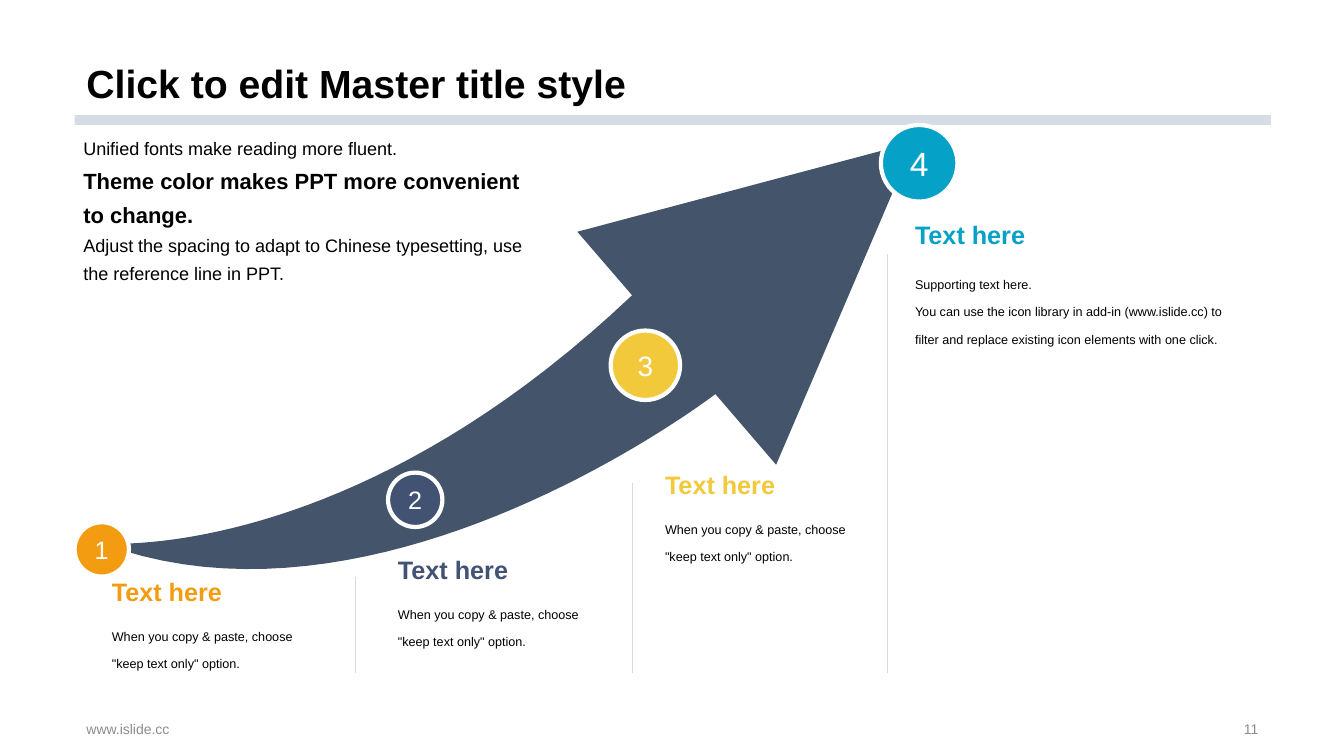
from pptx import Presentation
from pptx.dml.color import RGBColor
from pptx.enum.shapes import MSO_CONNECTOR, MSO_SHAPE
from pptx.enum.text import MSO_ANCHOR, PP_ALIGN
from pptx.oxml.ns import qn
from pptx.util import Cm, Pt
from lxml.etree import SubElement

BLACK, WHITE, GREY = "000000", "FFFFFF", "8C8C8C"
BAR, ARROW, DIVIDER = "D6DCE5", "44546A", "D9D9D9"
DIVIDER_BOTTOM = 16.97
HEADING_HEIGHT = 1.14
SHORT_BODY = ['When you copy & paste, choose "keep text only" option.']
LONG_BODY = [
    "Supporting text here.",
    "You can use the icon library in add-in (www.islide.cc) to filter "
    "and replace existing icon elements with one click.",
]

# number, color, circle (left, top, size), number size,
# text (left, top, width, body height), heading anchor, body
STEPS = [
    ("1", "F39C12", (1.88, 13.16, 1.37), 18, (2.57, 14.27, 5.87, 1.55),
     MSO_ANCHOR.BOTTOM, SHORT_BODY),
    ("2", "425272", (9.78, 11.91, 1.37), 18, (9.78, 13.72, 5.87, 1.55),
     MSO_ANCHOR.BOTTOM, SHORT_BODY),
    ("3", "F3C93C", (15.39, 8.33, 1.75), 20, (16.51, 11.58, 5.87, 1.55),
     MSO_ANCHOR.BOTTOM, SHORT_BODY),
    ("4", "06A1C6", (22.2, 3.15, 1.93), 24, (22.81, 5.41, 8.53, 2.51),
     MSO_ANCHOR.TOP, LONG_BODY),
]
DIVIDERS = [(8.94, 14.53), (15.93, 12.17), (22.35, 6.4)]


def color(hex_string):
    return RGBColor.from_string(hex_string)


def curve(start, control1, control2, end, steps=40):
    """Points along a cubic Bezier curve, without its start."""
    points = []
    for step in range(1, steps + 1):
        t = step / steps
        weights = ((1 - t) ** 3, 3 * t * (1 - t) ** 2, 3 * t * t * (1 - t), t ** 3)
        corners = (start, control1, control2, end)
        points.append(tuple(sum(w * corner[axis] for w, corner in zip(weights, corners))
                            for axis in (0, 1)))
    return points


class SlideBuilder:
    font_name = "Arial"

    def __init__(self, slide):
        self.slide = slide
        self.shapes = slide.shapes

    def style(self, paragraph, size, text_color, bold=False):
        for run in paragraph.runs:
            run.font.name = self.font_name
            run.font.size = Pt(size)
            run.font.bold = bold
            run.font.color.rgb = color(text_color)

    def text(self, box, lines, size, text_color=BLACK, bold=False, spacing=1.0,
             anchor=MSO_ANCHOR.TOP, align=PP_ALIGN.LEFT):
        shape = self.shapes.add_textbox(*map(Cm, box))
        text_frame = shape.text_frame
        text_frame.word_wrap = True
        text_frame.vertical_anchor = anchor
        text_frame.text = "\n".join(lines)
        for paragraph in text_frame.paragraphs:
            paragraph.alignment = align
            paragraph.line_spacing = spacing
            self.style(paragraph, size, text_color, bold)
        return shape

    def fill(self, shape, fill_color):
        shape.shadow.inherit = False
        shape.fill.solid()
        shape.fill.fore_color.rgb = color(fill_color)
        shape.line.fill.background()

    def bar(self, box, fill_color):
        self.fill(self.shapes.add_shape(MSO_SHAPE.RECTANGLE, *map(Cm, box)), fill_color)

    def circle(self, left, top, size, fill_color, number, number_size):
        shape = self.shapes.add_shape(MSO_SHAPE.OVAL, Cm(left), Cm(top), Cm(size), Cm(size))
        self.fill(shape, fill_color)
        shape.line.color.rgb = color(WHITE)
        shape.line.width = Pt(3)
        text_frame = shape.text_frame
        text_frame.word_wrap = False
        text_frame.vertical_anchor = MSO_ANCHOR.MIDDLE
        text_frame.text = number
        paragraph = text_frame.paragraphs[0]
        paragraph.alignment = PP_ALIGN.CENTER
        self.style(paragraph, number_size, WHITE)

    def outline(self, points, fill_color):
        corners = [(Cm(x), Cm(y)) for x, y in points]
        builder = self.shapes.build_freeform(*corners[0])
        builder.add_line_segments(corners[1:], close=True)
        self.fill(builder.convert_to_shape(), fill_color)

    def divider(self, x, top):
        line = self.shapes.add_connector(MSO_CONNECTOR.STRAIGHT, Cm(x), Cm(top),
                                         Cm(x), Cm(DIVIDER_BOTTOM))
        line.line.color.rgb = color(DIVIDER)
        line.line.width = Pt(0.25)
        SubElement(line._element.spPr, qn("a:effectLst"))


def main():
    presentation = Presentation()
    presentation.slide_width, presentation.slide_height = Cm(33.87), Cm(19.05)
    builder = SlideBuilder(presentation.slides.add_slide(presentation.slide_layouts[6]))

    builder.bar((1.88, 2.9, 30.15, 0.25), BAR)
    builder.text((1.93, 0, 30, 2.82), ["Click to edit Master title style"], 28,
                 bold=True, spacing=0.9, anchor=MSO_ANCHOR.BOTTOM)
    builder.text((1.93, 18.08, 11.43, 0.58), ["www.islide.cc"], 10, GREY,
                 anchor=MSO_ANCHOR.MIDDLE)
    builder.text((23.93, 18.08, 8.03, 0.58), ["11"], 10, GREY,
                 anchor=MSO_ANCHOR.MIDDLE, align=PP_ALIGN.RIGHT)

    tip, tail = (23.04, 3.58), (2.57, 13.69)
    lower_neck, upper_neck = (18.03, 9.93), (15.93, 7.44)
    builder.outline(
        [tip, (19.56, 11.71), lower_neck]
        + curve(lower_neck, (17.22, 10.54), (9.32, 16.23), tail)
        + curve(tail, tail, (8.76, 14.25), upper_neck)
        + [(14.55, 5.84)], ARROW)

    intro = builder.text((1.85, 3.18, 12.09, 4.24), [
        "Unified fonts make reading more fluent.",
        "Theme color makes PPT more convenient to change.",
        "Adjust the spacing to adapt to Chinese typesetting, use the reference line in PPT.",
    ], 12.9, spacing=1.3)
    builder.style(intro.text_frame.paragraphs[1], 15.7, BLACK, bold=True)

    for number, step_color, circle, size, text_box, anchor, body in STEPS:
        left, top, width, body_height = text_box
        builder.circle(*circle, step_color, number, size)
        builder.text((left, top + HEADING_HEIGHT, width, body_height), body, 9, spacing=1.8)
        builder.text((left, top, width, HEADING_HEIGHT), ["Text here"], 18, step_color,
                     bold=True, anchor=anchor)
    for x, top in DIVIDERS:
        builder.divider(x, top)

    presentation.save("out.pptx")


if __name__ == "__main__":
    main()
